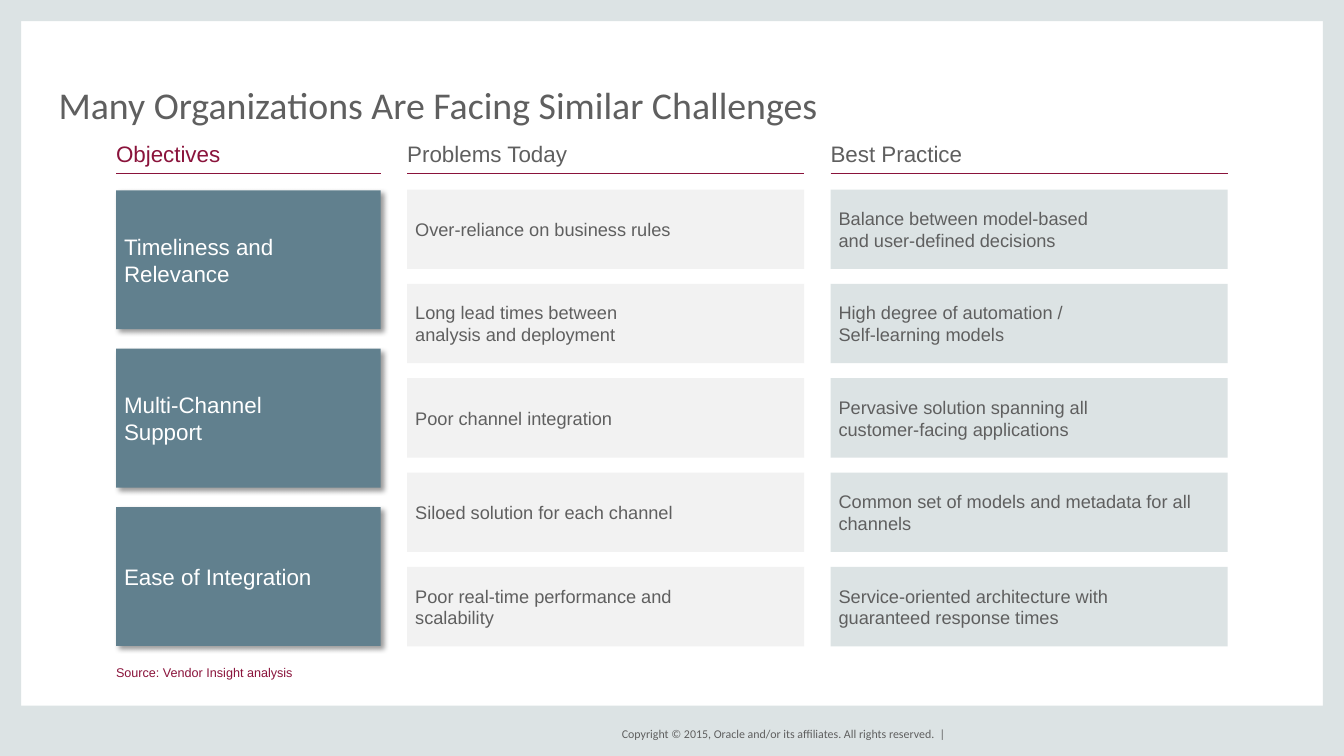
import pptx
import pptx.util
import pptx.enum.shapes
import pptx.enum.text
import pptx.dml.color
import pptx.oxml
import pptx.oxml.ns

Pt = pptx.util.Pt
RGB = pptx.dml.color.RGBColor.from_string
RECT = pptx.enum.shapes.MSO_SHAPE.RECTANGLE
LINE = pptx.enum.shapes.MSO_CONNECTOR.STRAIGHT
ALIGN = pptx.enum.text.PP_ALIGN
ANCHOR = pptx.enum.text.MSO_ANCHOR
qn = pptx.oxml.ns.qn

INK = {"frame": "DCE3E4", "text": "5F5F5F", "wine": "8A133B",
       "slate": "61808E", "pale": "F2F2F2", "white": "FFFFFF"}
SHADOW = ('<a:outerShdw xmlns:a="http://schemas.openxmlformats.org/drawingml/2006/main" '
          'blurRad="50800" dist="38100" dir="2700000" algn="tl" rotWithShape="0">'
          '<a:srgbClr val="000000"><a:alpha val="40000"/></a:srgbClr></a:outerShdw>')

deck = pptx.Presentation()
deck.slide_width, deck.slide_height = Pt(960), Pt(540)
slide = deck.slides.add_slide(deck.slide_layouts[5])
shapes = slide.shapes


def block(x, y, w, h, fill):
    box = shapes.add_shape(RECT, Pt(x), Pt(y), Pt(w), Pt(h))
    box.shadow.inherit = False
    box.fill.solid()
    box.fill.fore_color.rgb = RGB(INK[fill])
    box.line.fill.background()
    return box


def write(box, text, size, color, inset=0, anchor=ANCHOR.MIDDLE,
          align=ALIGN.LEFT, face="Arial"):
    frame = box.text_frame
    frame.text = text
    frame.word_wrap = True
    frame.auto_size = pptx.enum.text.MSO_AUTO_SIZE.NONE
    frame.vertical_anchor = anchor
    frame.margin_left = frame.margin_right = Pt(inset)
    frame.margin_top = frame.margin_bottom = Pt(inset)
    for para in frame.paragraphs:
        para.alignment = align
        for run in para.runs:
            run.font.name = face
            run.font.size = Pt(size)
            run.font.color.rgb = RGB(INK[color])


# Frame around the page
for side in [(0, 0, 15.1, 540), (944.9, 0, 15.1, 540),
             (0, 504, 960, 36), (0, 0, 960, 15.1)]:
    block(*side, "frame")

# Title
title = shapes.title
title.left, title.top, title.width, title.height = Pt(41.8), Pt(20.9), Pt(876.2), Pt(69.8)
write(title, "Many Organizations Are Facing Similar Challenges", 27, "text",
      anchor=ANCHOR.BOTTOM, face="Calibri")
title.text_frame.paragraphs[0].line_spacing = 0.8

# Columns: heading, heading colour, left, width, top, height, step, fill,
# text size, text colour, entries
columns = [
    ("Objectives", "wine", 82.9, 189, 136, 99.2, 113.1, "slate", 16, "white",
     ["Timeliness and Relevance", "Multi-Channel\vSupport", "Ease of Integration"]),
    ("Problems Today", "text", 290.9, 283.6, 135.4, 56.7, 67.4, "pale", 13, "text",
     ["Over-reliance on business rules",
      "Long lead times between\vanalysis and deployment",
      "Poor channel integration",
      "Siloed solution for each channel",
      "Poor real-time performance and\vscalability"]),
    ("Best Practice", "text", 593.3, 283.6, 135.4, 56.7, 67.4, "frame", 13, "text",
     ["Balance between model-based\vand user-defined decisions",
      "High degree of automation /\vSelf-learning models",
      "Pervasive solution spanning all\vcustomer-facing applications",
      "Common set of models and metadata for all channels",
      "Service-oriented architecture with\vguaranteed response times"]),
]
for head, tint, x, w, top, h, step, fill, size, color, items in columns:
    label = shapes.add_textbox(Pt(x), Pt(96), Pt(w), Pt(28))
    write(label, head, 16, tint)
    rule = shapes.add_connector(LINE, Pt(x), Pt(123.8), Pt(x + w), Pt(123.8))
    rule.line.color.rgb = RGB(INK["wine"])
    rule.line.width = Pt(0.25)
    rule._element.spPr.append(pptx.oxml.parse_xml(
        '<a:effectLst xmlns:a="http://schemas.openxmlformats.org/drawingml/2006/main"/>'))
    for row, item in enumerate(items):
        box = block(x, top + row * step, w, h, fill)
        write(box, item, size, color, inset=5.7)
        if fill == "slate":
            effects = box._element.spPr.find(qn("a:effectLst"))
            effects.append(pptx.oxml.parse_xml(SHADOW))

# Source and copyright
source = shapes.add_textbox(Pt(82.9), Pt(475), Pt(793.4), Pt(10))
write(source, "Source: Vendor Insight analysis", 9, "wine")
notice = shapes.add_textbox(Pt(423.4), Pt(516.6), Pt(252), Pt(14.4))
write(notice, "Copyright © 2015, Oracle and/or its affiliates. All rights reserved.  |",
      8.5, "text", align=ALIGN.RIGHT, face="Calibri")

deck.save("out.pptx")
